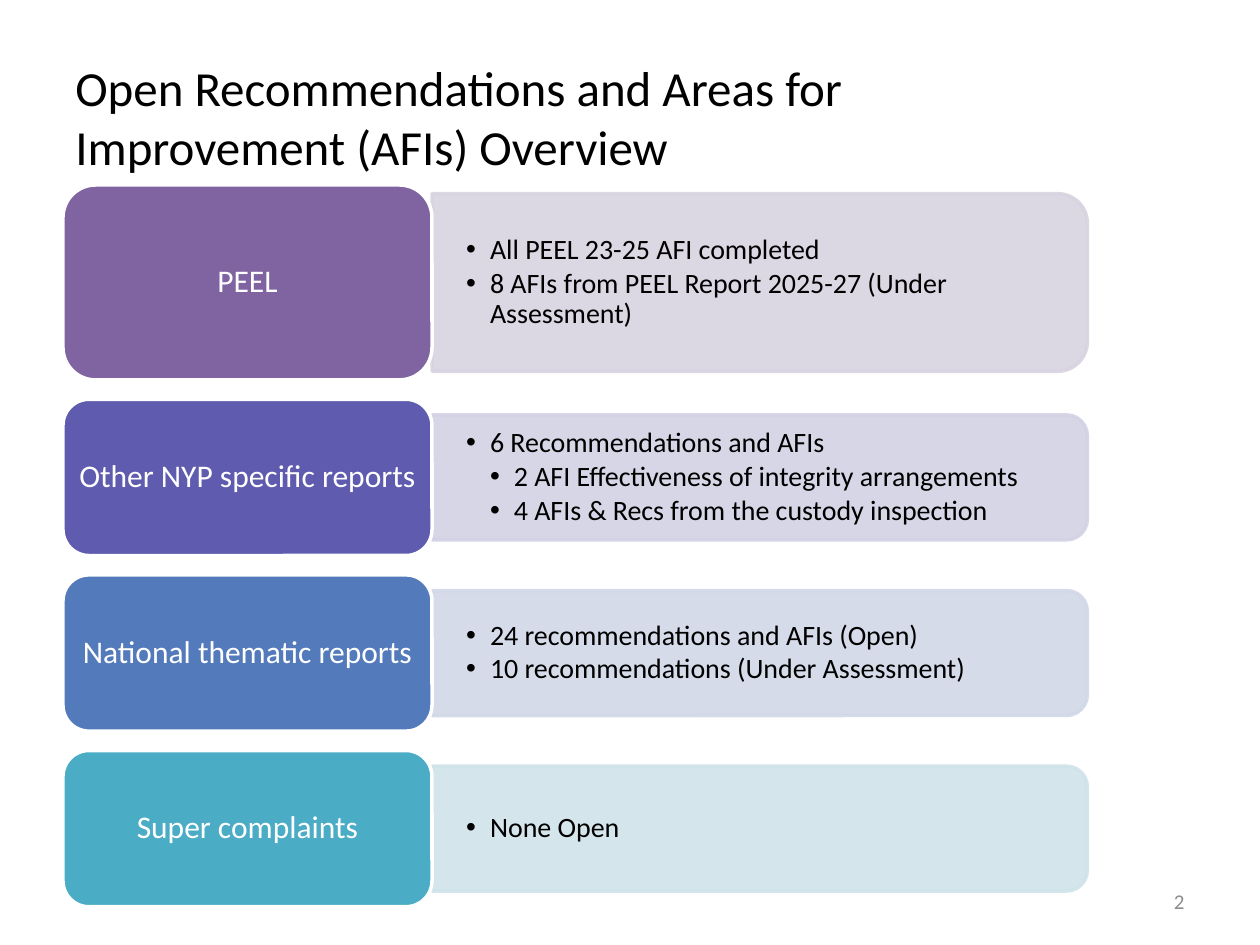
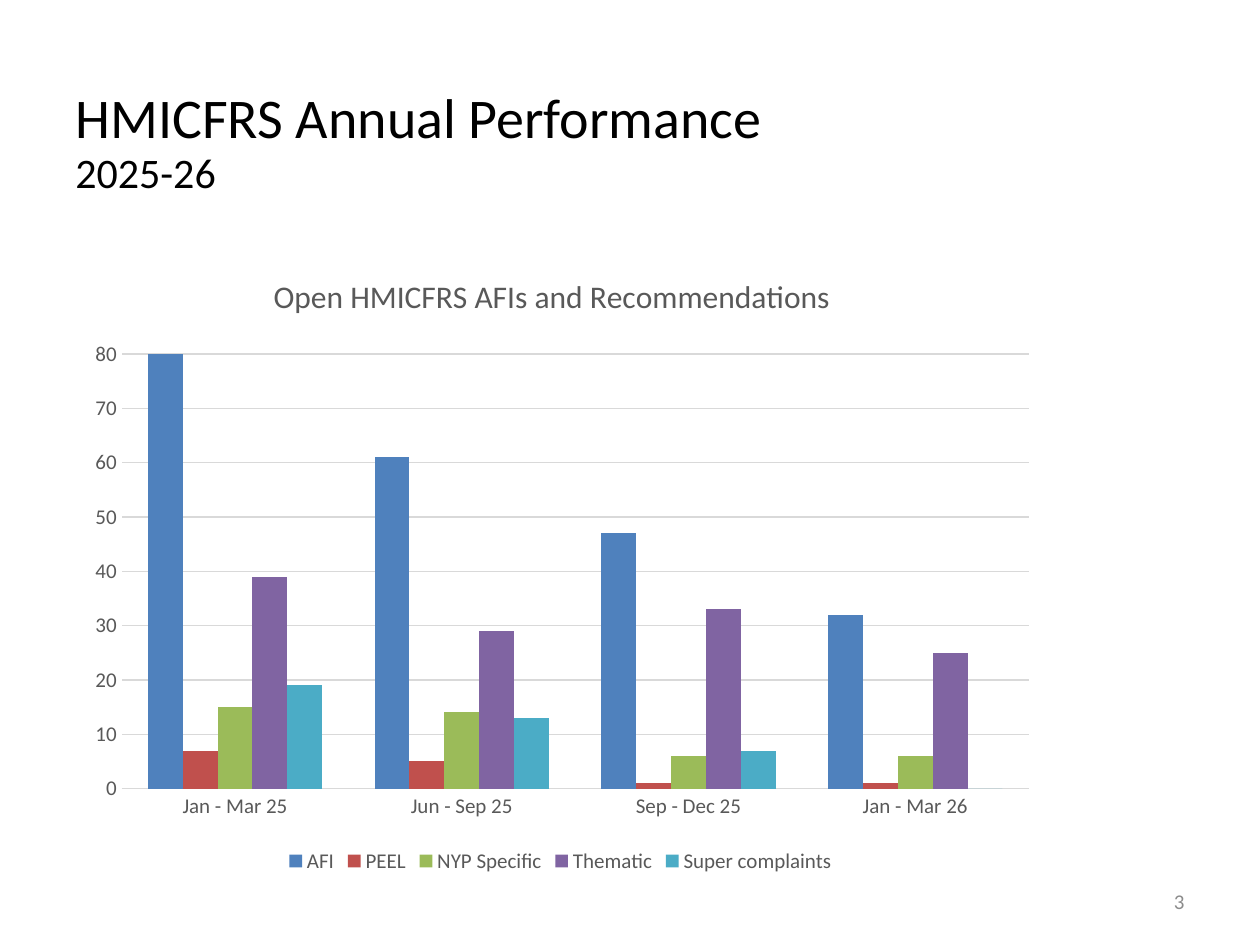
from lxml.etree import SubElement
from pptx import Presentation
from pptx.chart.data import CategoryChartData
from pptx.dml.color import RGBColor
from pptx.enum.chart import XL_CHART_TYPE as ChartType
from pptx.enum.chart import XL_LEGEND_POSITION as LegendPosition
from pptx.enum.chart import XL_TICK_MARK as TickMark
from pptx.enum.shapes import MSO_SHAPE as Shape
from pptx.enum.text import MSO_ANCHOR as Anchor
from pptx.enum.text import PP_ALIGN as Align
from pptx.oxml import parse_xml
from pptx.oxml.ns import nsdecls, qn
from pptx.util import Cm, Pt

FONT = "Calibri"
BLACK = RGBColor(0x00, 0x00, 0x00)
WHITE = RGBColor(0xFF, 0xFF, 0xFF)
PAGE_GREY = RGBColor(0x8C, 0x8C, 0x8C)
CHART_TEXT = RGBColor(0x59, 0x59, 0x59)
GRID = RGBColor(0xD9, 0xD9, 0xD9)
BLUE = RGBColor(0x4F, 0x81, 0xBD)
RED = RGBColor(0xC0, 0x50, 0x4D)
GREEN = RGBColor(0x9B, 0xBB, 0x59)
PURPLE = RGBColor(0x80, 0x64, 0xA2)
TEAL = RGBColor(0x4B, 0xAC, 0xC6)
INDIGO = RGBColor(0x5F, 0x5B, 0xAE)
MID_BLUE = RGBColor(0x53, 0x7A, 0xBA)
PALE_PURPLE = RGBColor(0xD8, 0xD3, 0xE0)
PALE_INDIGO = RGBColor(0xD2, 0xD2, 0xE4)
PALE_BLUE = RGBColor(0xD1, 0xD8, 0xE7)
PALE_TEAL = RGBColor(0xD0, 0xE3, 0xEA)

TITLE_BOX = (1.27, 0.76, 20.09, 3.18)
SUBTITLE_BOX = (1.27, 1.88, 20.09, 3.18)
PAGE_BOX = (18.21, 17.65, 5.92, 1.02)
CHART_BOX = (1.47, 4.78, 19.66, 12.93)
OVERVIEW_LEFT, OVERVIEW_TOP = 1.27, 3.73
CARD_WIDTH, PANEL_WIDTH, ROW_GAP = 7.44, 13.21, 0.39
BULLET_INDENT = 0.48

OVERVIEW_ROWS = [
    ("PEEL", PURPLE, PALE_PURPLE, 3.93, 3.58, [
        (1, "All PEEL 23-25 AFI completed"),
        (1, "8 AFIs from PEEL Report 2025-27 (Under Assessment)")]),
    ("Other NYP specific reports", INDIGO, PALE_INDIGO, 3.15, 2.52, [
        (1, "6 Recommendations and AFIs"),
        (2, "2 AFI Effectiveness of integrity arrangements"),
        (2, "4 AFIs & Recs from the custody inspection")]),
    ("National thematic reports", MID_BLUE, PALE_BLUE, 3.15, 2.52, [
        (1, "24 recommendations and AFIs (Open)"),
        (1, "10 recommendations (Under Assessment)")]),
    ("Super complaints", TEAL, PALE_TEAL, 3.15, 2.52, [(1, "None Open")]),
]

QUARTERS = ["Jan - Mar 25", "Jun - Sep 25", "Sep - Dec 25", "Jan - Mar 26"]
OPEN_ITEMS = [
    ("AFI", BLUE, (80, 61, 47, 32)),
    ("PEEL", RED, (7, 5, 1, 1)),
    ("NYP Specific", GREEN, (15, 14, 6, 6)),
    ("Thematic", PURPLE, (39, 29, 33, 25)),
    ("Super complaints", TEAL, (19, 13, 7, 0)),
]


def style_font(font, size, color):
    """Apply the shared typeface with a size and colour."""
    font.name, font.size, font.bold = FONT, Pt(size), False
    font.color.rgb = color


def add_run(paragraph, text, size, color):
    """Append one styled run."""
    run = paragraph.add_run()
    run.text = text
    style_font(run.font, size, color)


def prepare_frame(frame, side=0.25, edge=0.13):
    """Wrap and centre a text frame vertically inside its insets."""
    frame.word_wrap = True
    frame.vertical_anchor = Anchor.MIDDLE
    frame.margin_left = frame.margin_right = Cm(side)
    frame.margin_top = frame.margin_bottom = Cm(edge)
    return frame


def add_line_of_text(slide, box, text, size, color=BLACK, align=Align.LEFT):
    """Place a single-paragraph text box."""
    frame = prepare_frame(slide.shapes.add_textbox(*map(Cm, box)).text_frame)
    frame.paragraphs[0].alignment = align
    add_run(frame.paragraphs[0], text, size, color)


def add_base_slide(deck, title, title_size, number):
    """Add a blank slide with the shared title and page number."""
    slide = deck.slides.add_slide(deck.slide_layouts[6])
    add_line_of_text(slide, TITLE_BOX, title, title_size)
    add_line_of_text(slide, PAGE_BOX, str(number), 12, PAGE_GREY, Align.RIGHT)
    return slide


def add_block(slide, preset, box, fill, line):
    """Add a flat preset shape with a 2 pt outline."""
    block = slide.shapes.add_shape(preset, *map(Cm, box))
    block.shadow.inherit = False
    block.fill.solid()
    block.fill.fore_color.rgb = fill
    block.line.color.rgb = line
    block.line.width = Pt(2)
    return block


def add_detail_panel(slide, left, top, width, height, color, details):
    """Draw a pale panel rounded on its right side, with bullets over it."""
    turned_box = (left + (width - height) / 2, top + (height - width) / 2, height, width)
    panel = add_block(slide, Shape.ROUND_2_SAME_RECTANGLE, turned_box, color, color)
    panel.rotation = 90
    for tint in panel._element.spPr.iter(qn("a:srgbClr")):
        SubElement(tint, qn("a:alpha"), val="90000")
    bullets = slide.shapes.add_textbox(Cm(left), Cm(top), Cm(width - 0.13), Cm(height))
    frame = prepare_frame(bullets.text_frame, 0.69, 0.36)
    for index, (level, text) in enumerate(details):
        item = frame.add_paragraph() if index else frame.paragraphs[0]
        item.line_spacing = 0.9
        item.space_after = Pt(2)
        properties = item._p.get_or_add_pPr()
        properties.set("marL", str(Cm(BULLET_INDENT * level)))
        properties.set("indent", str(-Cm(BULLET_INDENT)))
        SubElement(properties, qn("a:buFont"), typeface="Arial")
        SubElement(properties, qn("a:buChar"), char="•")
        add_run(item, text, 16, BLACK)


def add_category_card(slide, box, color, label):
    """Draw the coloured card that names a category."""
    card = add_block(slide, Shape.ROUNDED_RECTANGLE, box, color, WHITE)
    heading = prepare_frame(card.text_frame, 0.1, 0.1).paragraphs[0]
    heading.alignment = Align.CENTER
    heading.line_spacing = 0.9
    add_run(heading, label, 18, WHITE)


def add_overview(slide, left, top):
    """Stack the category rows downwards from a corner."""
    for label, color, pale, height, panel_height, details in OVERVIEW_ROWS:
        add_detail_panel(slide, left + CARD_WIDTH, top + (height - panel_height) / 2,
                         PANEL_WIDTH, panel_height, pale, details)
        add_category_card(slide, (left, top, CARD_WIDTH, height), color, label)
        top += height + ROW_GAP


def manual_layout(x, y, size=None):
    """Build a chart layout element from fractions of the chart area."""
    values = [("xMode", "edge"), ("yMode", "edge"), ("x", x), ("y", y)]
    if size:
        values = [("layoutTarget", "inner")] + values + list(zip("wh", size))
    parts = "".join(f'<c:{tag} val="{value}"/>' for tag, value in values)
    return parse_xml(f'<c:layout {nsdecls("c")}><c:manualLayout>{parts}'
                     '</c:manualLayout></c:layout>')


def place_chart_parts(chart):
    """Fix the chart title and the plot area in place."""
    title = chart.chart_title._element
    plot_area = chart._chartSpace.chart.plotArea
    for parent, index, layout in (
            (title, 1, manual_layout(0.2, 0.05)),
            (plot_area, 0, manual_layout(0.05, 0.14, (0.93, 0.72)))):
        for previous in parent.findall(qn("c:layout")):
            parent.remove(previous)
        parent.insert(index, layout)


def style_axes(chart):
    """Style the quarter axis and the count axis."""
    for axis in (chart.category_axis, chart.value_axis):
        axis.major_tick_mark = axis.minor_tick_mark = TickMark.NONE
        style_font(axis.tick_labels.font, 12, CHART_TEXT)
    quarters, counts = chart.category_axis, chart.value_axis
    counts.minimum_scale, counts.maximum_scale, counts.major_unit = 0, 85, 10
    counts.format.line.fill.background()
    for line in (quarters.format.line, counts.major_gridlines.format.line):
        line.color.rgb = GRID
        line.width = Pt(0.75)


def add_performance_chart(slide, box):
    """Add the clustered columns of open items by quarter."""
    data = CategoryChartData()
    data.categories = QUARTERS
    for name, _, counts in OPEN_ITEMS:
        data.add_series(name, counts)
    chart = slide.shapes.add_chart(ChartType.COLUMN_CLUSTERED, *map(Cm, box), data).chart
    style_font(chart.font, 10, BLACK)
    heading = chart.chart_title.text_frame.paragraphs[0]
    add_run(heading, "Open HMICFRS AFIs and Recommendations", 18, CHART_TEXT)
    chart.has_legend = True
    chart.legend.position = LegendPosition.BOTTOM
    chart.legend.include_in_layout = False
    style_font(chart.legend.font, 12, CHART_TEXT)
    columns = chart.plots[0]
    columns.gap_width, columns.overlap = 150, 0
    columns.vary_by_categories = False
    for series, (_, color, _) in zip(columns.series, OPEN_ITEMS):
        series.format.fill.solid()
        series.format.fill.fore_color.rgb = color
    style_axes(chart)
    place_chart_parts(chart)


def main():
    """Build and save the two slides."""
    deck = Presentation()
    deck.slide_width, deck.slide_height = Cm(25.4), Cm(19.05)
    overview = add_base_slide(
        deck, "Open Recommendations and Areas for Improvement (AFIs) Overview", 28, 2)
    add_overview(overview, OVERVIEW_LEFT, OVERVIEW_TOP)
    performance = add_base_slide(deck, "HMICFRS Annual Performance", 32, 3)
    add_performance_chart(performance, CHART_BOX)
    add_line_of_text(performance, SUBTITLE_BOX, "2025-26", 24)
    deck.save("out.pptx")


if __name__ == "__main__":
    main()
